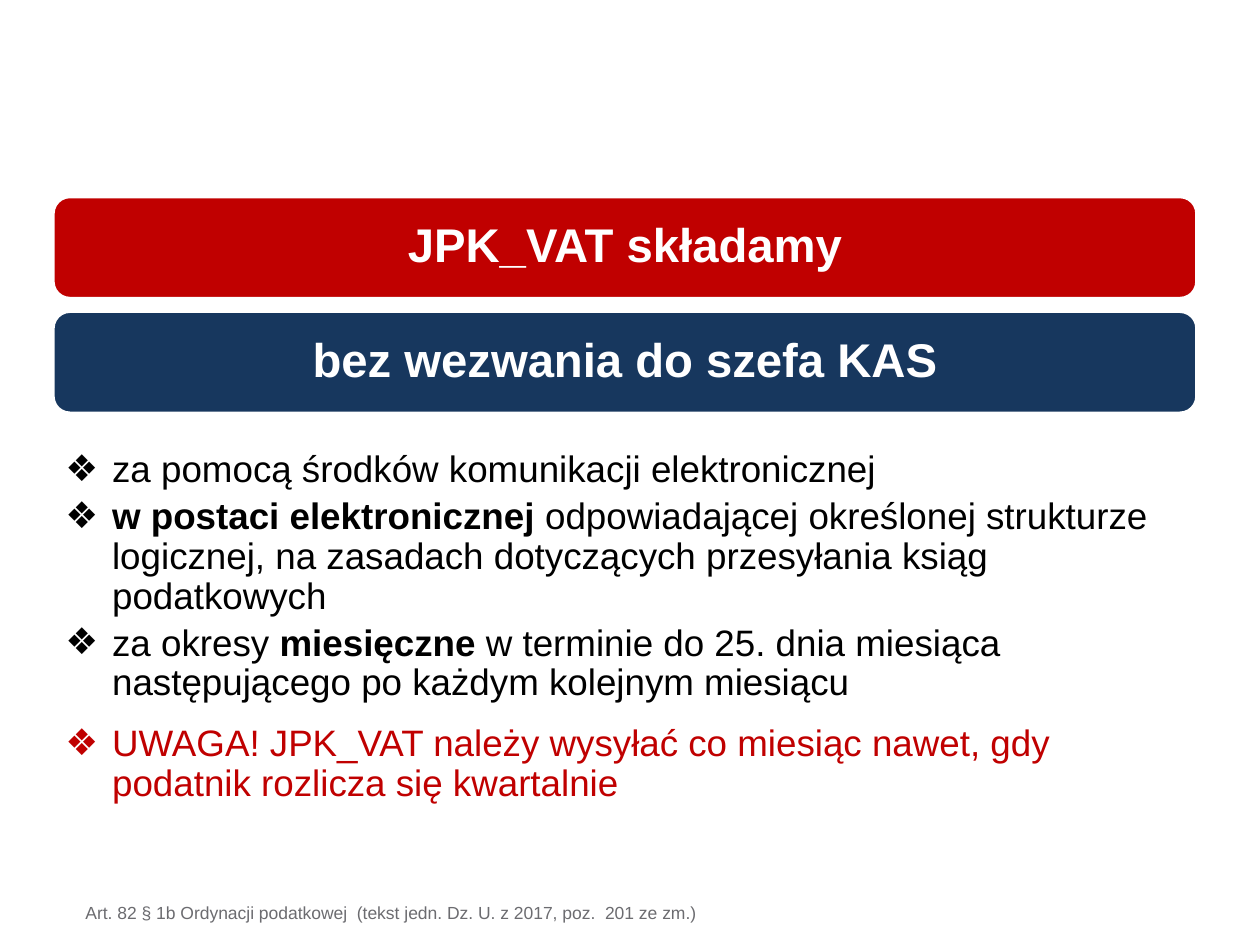
"""Build the slide on when and how JPK_VAT is submitted."""
from dataclasses import dataclass

from lxml.etree import SubElement
from pptx import Presentation
from pptx.dml.color import RGBColor
from pptx.enum.shapes import MSO_SHAPE as Shape
from pptx.enum.text import MSO_ANCHOR as Anchor, MSO_AUTO_SIZE as AutoSize, PP_ALIGN as Align
from pptx.oxml.ns import qn
from pptx.util import Inches, Pt

RED = RGBColor(0xC0, 0x00, 0x00)
NAVY = RGBColor(0x17, 0x37, 0x5E)
WHITE = RGBColor(0xFF, 0xFF, 0xFF)
BLACK = RGBColor(0x00, 0x00, 0x00)
GRAY = RGBColor(0x6C, 0x6C, 0x70)
FONT = "Arial"
LEFT = 0.42
BANNER_TOP, BANNER_PITCH = 1.56, 0.91


@dataclass(frozen=True)
class Banner:
    text: str
    fill: RGBColor


@dataclass(frozen=True)
class Segment:
    text: str
    bold: bool = False


@dataclass(frozen=True)
class Bullet:
    segments: tuple[Segment, ...]
    color: RGBColor = BLACK
    space_after: float = 4.2


BANNERS = (
    Banner("JPK_VAT składamy", RED),
    Banner("bez wezwania do szefa KAS", NAVY),
)
BULLETS = (
    Bullet((Segment("za pomocą środków komunikacji elektronicznej"),)),
    Bullet((
        Segment("w postaci elektronicznej ", True),
        Segment("odpowiadającej określonej strukturze logicznej, "
                "na zasadach dotyczących przesyłania ksiąg podatkowych"),
    )),
    Bullet((
        Segment("za okresy "),
        Segment("miesięczne", True),
        Segment(" w terminie do 25. dnia miesiąca następującego po każdym kolejnym miesiącu"),
    ), space_after=12),
    Bullet((Segment("UWAGA! JPK_VAT należy wysyłać co miesiąc nawet, "
                    "gdy podatnik rozlicza się kwartalnie"),), RED),
)
SOURCE = "Art. 82 § 1b Ordynacji podatkowej  (tekst jedn. Dz. U. z 2017, poz.  201 ze zm.)"


def set_font(paragraph, size: float, color: RGBColor) -> None:
    paragraph.font.name = FONT
    paragraph.font.size = Pt(size)
    paragraph.font.color.rgb = color


def add_banner(slide, banner: Banner, top: float) -> None:
    shape = slide.shapes.add_shape(
        Shape.ROUNDED_RECTANGLE, Inches(LEFT), Inches(top), Inches(9.08), Inches(0.81))
    shape.shadow.inherit = False
    shape.fill.solid()
    shape.fill.fore_color.rgb = banner.fill
    shape.line.color.rgb = WHITE
    shape.line.width = Pt(2)
    frame = shape.text_frame
    frame.word_wrap = True
    frame.vertical_anchor = Anchor.MIDDLE
    frame.margin_left = frame.margin_right = Inches(0.15)
    frame.margin_top = frame.margin_bottom = Inches(0.15)
    paragraph = frame.paragraphs[0]
    paragraph.text = banner.text
    paragraph.alignment = Align.CENTER
    paragraph.line_spacing = 0.9
    paragraph.space_after = Pt(9.4)
    set_font(paragraph, 27, WHITE)
    paragraph.font.bold = True


def fill_bullet(paragraph, bullet: Bullet) -> None:
    paragraph.level = 1
    paragraph.line_spacing = 0.9
    paragraph.space_before = Pt(0)
    paragraph.space_after = Pt(bullet.space_after)
    properties = paragraph._p.get_or_add_pPr()
    properties.set("marL", str(Inches(0.38)))
    properties.set("indent", str(Inches(-0.37)))
    color = SubElement(properties, qn("a:buClr"))
    SubElement(color, qn("a:srgbClr"), val=str(bullet.color))
    SubElement(properties, qn("a:buFont"), typeface=FONT)
    SubElement(properties, qn("a:buChar"), char="❖")
    set_font(paragraph, 21, bullet.color)
    for segment in bullet.segments:
        run = paragraph.add_run()
        run.text = segment.text
        run.font.bold = segment.bold


def fill_list(body, bullets: tuple[Bullet, ...]) -> None:
    body.left, body.top = Inches(0.41), Inches(3.53)
    body.width, body.height = Inches(9.2), Inches(2.94)
    frame = body.text_frame
    frame.auto_size = AutoSize.NONE
    frame.word_wrap = True
    frame.vertical_anchor = Anchor.TOP
    for index, bullet in enumerate(bullets):
        fill_bullet(frame.add_paragraph() if index else frame.paragraphs[0], bullet)


def add_source(slide, text: str) -> None:
    box = slide.shapes.add_textbox(Inches(0.58), Inches(7.11), Inches(5.12), Inches(0.26))
    box.fill.solid()
    box.fill.fore_color.rgb = WHITE
    box.text_frame.word_wrap = False
    paragraph = box.text_frame.paragraphs[0]
    paragraph.text = text
    set_font(paragraph, 10, GRAY)


def main() -> None:
    presentation = Presentation()
    presentation.slide_width, presentation.slide_height = Inches(10), Inches(7.5)
    slide = presentation.slides.add_slide(presentation.slide_layouts[1])
    title = slide.shapes.title.element
    title.getparent().remove(title)
    for index, banner in enumerate(BANNERS):
        add_banner(slide, banner, BANNER_TOP + index * BANNER_PITCH)
    add_source(slide, SOURCE)
    fill_list(slide.placeholders[1], BULLETS)
    presentation.save("out.pptx")


if __name__ == "__main__":
    main()
